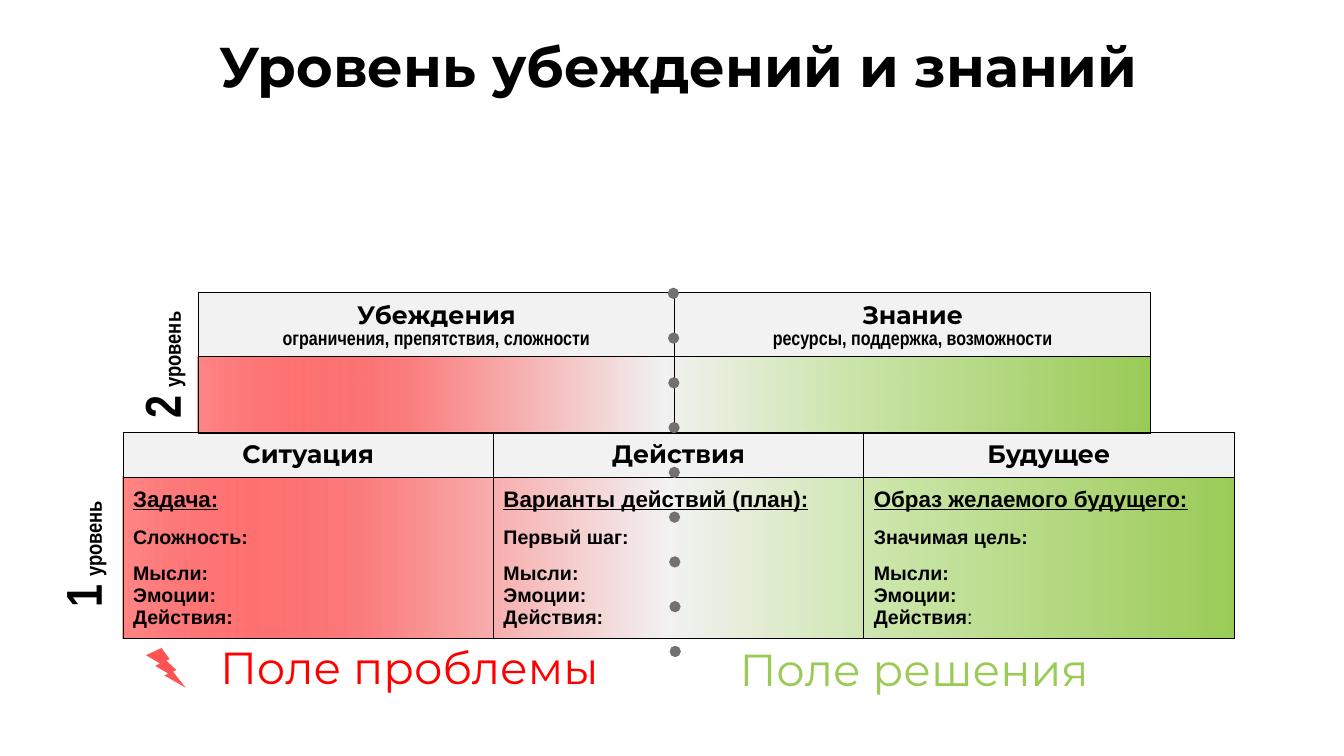
from dataclasses import dataclass, replace
from lxml.etree import SubElement
from pptx import Presentation
from pptx.dml.color import RGBColor
from pptx.enum.dml import MSO_LINE
from pptx.enum.shapes import MSO_CONNECTOR, MSO_SHAPE
from pptx.enum.text import MSO_ANCHOR, MSO_AUTO_SIZE, PP_ALIGN
from pptx.oxml.ns import qn
from pptx.util import Cm, Pt


@dataclass(frozen=True)
class Theme:
    heading_font: str = "Montserrat"
    body_font: str = "Arial"
    narrow_font: str = "Arial Narrow"
    black: str = "000000"
    red: str = "FF0000"
    green: str = "9ACB56"
    header: str = "F2F2F2"
    dots: str = "757070"
    gradient: tuple = ((0, "FF0000", 47), (23, "FB8181", 100), (49, "F2F2F2", 100),
                       (69, "CBE5A9", 100), (100, "9ACB56", 100))
    title: int = 40
    level: int = 36
    field: int = 32
    gap: int = 24
    heading: int = 18
    lead: int = 16
    item: int = 14


@dataclass(frozen=True)
class Line:
    spans: tuple
    font: str
    size: int
    color: str
    bold: bool = True
    underline: bool = False
    align: PP_ALIGN = PP_ALIGN.LEFT
    spacing: object = None
    after: float = 0


def add_color(parent, color, alpha):
    node = SubElement(parent, qn("a:srgbClr"), val=color)
    SubElement(node, qn("a:alpha"), val=str(alpha * 1000))


class SlideBuilder:
    def __init__(self, deck, theme):
        self.theme = theme
        self.page = deck.slides.add_slide(deck.slide_layouts[5])

    def set_lines(self, frame, lines):
        for index, line in enumerate(lines):
            para = frame.add_paragraph() if index else frame.paragraphs[0]
            para.alignment = line.align
            para.space_before = Pt(0)
            para.space_after = Pt(line.after)
            if line.spacing:
                para.line_spacing = line.spacing
            font = para.font
            font.name, font.bold, font.underline = line.font, line.bold, line.underline
            font.size = Pt(line.size)
            font.color.rgb = RGBColor.from_string(line.color)
            for text, size, bold in line.spans:
                span = para.add_run()
                span.text = text
                if size:
                    span.font.size = Pt(size)
                if bold is not None:
                    span.font.bold = bold

    def heading_line(self, text):
        return Line(((text, None, None),), self.theme.heading_font, self.theme.heading,
                    self.theme.black, align=PP_ALIGN.CENTER)

    def title(self, text, left, top, width, height):
        box = self.page.shapes.title
        box.left, box.top, box.width, box.height = map(Cm, (left, top, width, height))
        frame = box.text_frame
        frame.auto_size = MSO_AUTO_SIZE.NONE
        frame.vertical_anchor = MSO_ANCHOR.TOP
        self.set_lines(frame, [replace(self.heading_line(text), size=self.theme.title, spacing=0.5)])

    def text(self, line, left, top, width, height, rotation=0):
        box = self.page.shapes.add_textbox(*map(Cm, (left, top, width, height)))
        box.rotation = rotation
        box.text_frame.word_wrap = True
        box.text_frame.vertical_anchor = MSO_ANCHOR.MIDDLE
        self.set_lines(box.text_frame, [line])

    def level(self, number, left, top, width):
        theme = self.theme
        spans = ((number, None, None), (" ", theme.gap, None), ("уровень", theme.lead, None))
        line = Line(spans, theme.narrow_font, theme.level, theme.black, spacing=Pt(15))
        self.text(line, left, top, width, 0.79, 270)

    def field(self, text, color, left, top, width):
        line = replace(self.heading_line(text), size=self.theme.field, color=color, bold=False)
        self.text(line, left, top, width, 1.63)

    def shape(self, kind, left, top, width, height):
        shape = self.page.shapes.add_shape(kind, *map(Cm, (left, top, width, height)))
        shape.shadow.inherit = False
        shape.line.fill.background()
        return shape

    def gradient_band(self, left, top, width, height):
        band = self.shape(MSO_SHAPE.RECTANGLE, left, top, width, height)
        band.fill.gradient()
        band.fill.gradient_angle = 0
        stops = band._element.spPr.find(qn("a:gradFill")).find(qn("a:gsLst"))
        for stop in list(stops):
            stops.remove(stop)
        for position, color, alpha in self.theme.gradient:
            add_color(SubElement(stops, qn("a:gs"), pos=str(position * 1000)), color, alpha)

    def bolt(self, left, top, size):
        bolt = self.shape(MSO_SHAPE.LIGHTNING_BOLT, left, top, size, size)
        bolt.fill.solid()
        bolt.fill.fore_color.rgb = RGBColor.from_string(self.theme.red)
        color = bolt._element.spPr.find(qn("a:solidFill"))[0]
        SubElement(color, qn("a:alpha"), val="68000")

    def border(self, cell):
        properties = cell._tc.get_or_add_tcPr()
        for index, side in enumerate(("a:lnL", "a:lnR", "a:lnT", "a:lnB")):
            edge = SubElement(properties, qn(side), w=str(Pt(0.75)))
            add_color(SubElement(edge, qn("a:solidFill")), self.theme.black, 100)
            properties.insert(index, edge)

    def table(self, rows, left, top, width, heights):
        count = len(rows[0])
        frame = self.page.shapes.add_table(
            len(rows), count, *map(Cm, (left, top, width, sum(heights))))
        table = frame.table
        table.first_row = table.horz_banding = False
        for column in table.columns:
            column.width = Cm(width / count)
        for index, (row, height) in enumerate(zip(rows, heights)):
            table.rows[index].height = Cm(height)
            for cell, lines in zip(table.rows[index].cells, row):
                cell.vertical_anchor = MSO_ANCHOR.MIDDLE
                if index:
                    cell.fill.background()
                else:
                    cell.fill.solid()
                    cell.fill.fore_color.rgb = RGBColor.from_string(self.theme.header)
                self.border(cell)
                self.set_lines(cell.text_frame, lines)

    def dotted_line(self, start_x, start_y, end_x, end_y):
        divider = self.page.shapes.add_connector(
            MSO_CONNECTOR.STRAIGHT, *map(Cm, (start_x, start_y, end_x, end_y)))
        divider.line.color.rgb = RGBColor.from_string(self.theme.dots)
        divider.line.width = Pt(8)
        divider.line.dash_style = MSO_LINE.SQUARE_DOT
        outline = divider._element.spPr.find(qn("a:ln"))
        outline.set("cap", "rnd")
        outline.find(qn("a:prstDash")).set("val", "dot")
        SubElement(divider._element.spPr, qn("a:effectLst"))

    def belief_header(self, name, detail):
        line = self.heading_line(name)
        return [line, replace(line, spans=((detail, None, None),),
                              font=self.theme.narrow_font, size=self.theme.item)]

    def plan_cell(self, lead, step, colon_bold=None):
        theme = self.theme
        item = Line(((step, None, None),), theme.body_font, theme.item, theme.black, after=10.3)
        first = replace(item, spans=((lead, None, None),), size=theme.lead, underline=True)
        rest = [replace(item, spans=((text, None, None),), after=0)
                for text in ("Мысли:", "Эмоции:")]
        ending = (("Действия:", None, None),) if colon_bold is None else (
            ("Действия", None, None), (":", None, colon_bold))
        return [first, item, *rest, replace(item, spans=ending, after=0)]


def main():
    deck = Presentation()
    deck.slide_width, deck.slide_height = Cm(33.87), Cm(19.05)
    theme = Theme()
    slide = SlideBuilder(deck, theme)
    slide.title("Уровень убеждений и знаний", 4.85, 1.4, 24.49, 1.17)
    slide.gradient_band(4.98, 8.99, 24, 1.88)
    slide.level("1", 0.51, 13.11, 4.09)
    slide.level("2", 2.77, 8.61, 3.56)
    slide.field("Поле решения", theme.green, 16.08, 16.03, 13.92)
    slide.field("Поле проблемы", theme.red, 4.01, 15.98, 12.62)
    slide.bolt(3.68, 16.33, 1)
    slide.gradient_band(3.1, 12.01, 28, 4.09)
    stages = [[slide.heading_line(name)] for name in ("Ситуация", "Действия", "Будущее")]
    plans = [slide.plan_cell("Задача:", "Сложность:"),
             slide.plan_cell("Варианты действий (план):", "Первый шаг:"),
             slide.plan_cell("Образ желаемого будущего:", "Значимая цель:", False)]
    slide.table([stages, plans], 3.1, 10.9, 28, (1.13, 4.06))
    beliefs = [slide.belief_header("Убеждения", "ограничения, препятствия, сложности"),
               slide.belief_header("Знание", "ресурсы, поддержка, возможности")]
    slide.table([beliefs, [[], []]], 5, 7.37, 24, (1.62, 1.93))
    slide.dotted_line(16.97, 7.39, 17.02, 17.12)
    deck.save("out.pptx")


if __name__ == "__main__":
    main()
